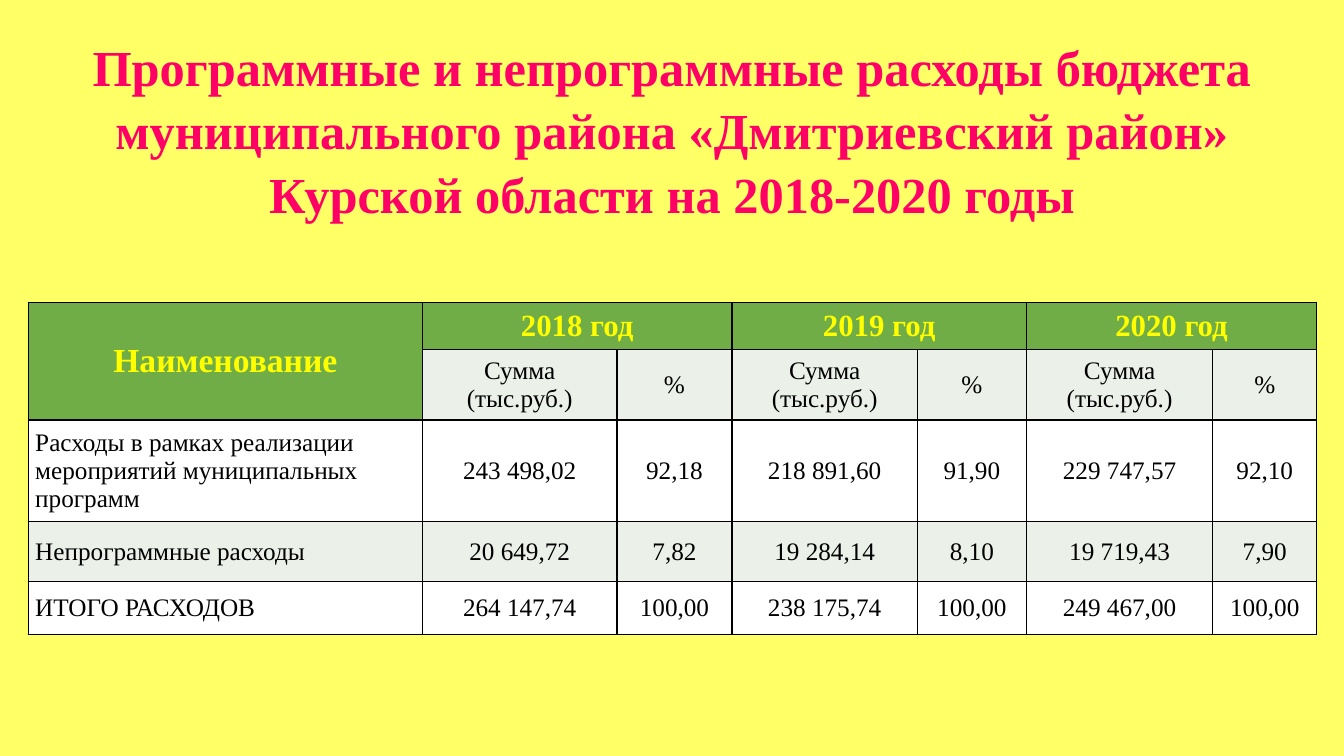
import pptx
import pptx.util
import pptx.dml.color
import pptx.enum.text
import pptx.oxml
import pptx.oxml.ns

COLORS = {"page": "FFFF66", "title": "FF0066", "head": "70AD47", "head_text": "FFFF00",
          "band": "EBF1E9", "plain": "FFFFFF", "text": "000000", "border": "000000"}
FONT = "Times New Roman"
inch = pptx.util.Inches
middle = pptx.enum.text.MSO_ANCHOR.MIDDLE


def rgb(name):
    return pptx.dml.color.RGBColor.from_string(COLORS[name])


def write(tf, text, size=18, color="text", bold=False, align="CENTER", spacing=1.0):
    p = tf.paragraphs[0]
    p.alignment = pptx.enum.text.PP_ALIGN[align]
    p.line_spacing = spacing
    for i, line in enumerate(text.split("\n")):
        if i:
            p.add_line_break()
        r = p.add_run()
        r.text = line
        r.font.name = FONT
        r.font.size = pptx.util.Pt(size)
        r.font.bold = bold
        r.font.color.rgb = rgb(color)


# Slide and background
prs = pptx.Presentation()
prs.slide_width, prs.slide_height = inch(13.33), inch(7.5)
s = prs.slides.add_slide(prs.slide_layouts[6])
s.background.fill.solid()
s.background.fill.fore_color.rgb = rgb("page")

# Title
sp = s.shapes.add_textbox(0, 0, prs.slide_width, inch(2.54))
tf = sp.text_frame
tf.word_wrap = True
tf.vertical_anchor = middle
write(tf, "Программные и непрограммные расходы бюджета\n"
          "муниципального района «Дмитриевский район»\n"
          "Курской области на 2018-2020 годы",
      size=36, color="title", bold=True, spacing=1.05)

# Table content
years = ["2018 год", "2019 год", "2020 год"]
rows = [
    ["Наименование"] + [text for year in years for text in (year, "")],
    [""] + ["Сумма (тыс.руб.)", "%"] * len(years),
    ["Расходы в рамках реализации мероприятий муниципальных программ",
     "243 498,02", "92,18", "218 891,60", "91,90", "229 747,57", "92,10"],
    ["Непрограммные расходы",
     "20 649,72", "7,82", "19 284,14", "8,10", "19 719,43", "7,90"],
    ["ИТОГО РАСХОДОВ",
     "264 147,74", "100,00", "238 175,74", "100,00", "249 467,00", "100,00"],
]
widths = [3.91, 1.93, 1.14, 1.84, 1.08, 1.85, 1.03]
heights = [0.44, 0.65, 1.01, 0.59, 0.53]
fills = ["head", "band", "plain", "band", "plain"]

# Table grid
table = s.shapes.add_table(len(rows), len(widths), inch(0.28), inch(3),
                           inch(sum(widths)), inch(sum(heights))).table
for column, width in zip(table.columns, widths):
    column.width = inch(width)
for row, height in zip(table.rows, heights):
    row.height = inch(height)

# Merged headers
table.cell(0, 0).merge(table.cell(1, 0))
for c in range(1, len(widths), 2):
    table.cell(0, c).merge(table.cell(0, c + 1))

# Cells
for i, texts in enumerate(rows):
    for j, text in enumerate(texts):
        cell = table.cell(i, j)
        cell.vertical_anchor = middle
        if i > 1:
            cell.margin_left = cell.margin_right = inch(0.07)
            cell.margin_top = cell.margin_bottom = 0
        for side in "LRTB":
            cell._tc.get_or_add_tcPr().append(pptx.oxml.parse_xml(
                f'<a:ln{side} {pptx.oxml.ns.nsdecls("a")} w="12700"><a:solidFill>'
                f'<a:srgbClr val="{COLORS["border"]}"/></a:solidFill></a:ln{side}>'))
        cell.fill.solid()
        cell.fill.fore_color.rgb = rgb("head" if i < 2 and j == 0 else fills[i])
        if not text:
            continue
        if i == 0:
            write(cell.text_frame, text, size=22 if j else 24, color="head_text", bold=True)
        else:
            write(cell.text_frame, text, align="CENTER" if j else "LEFT")

prs.save("out.pptx")
